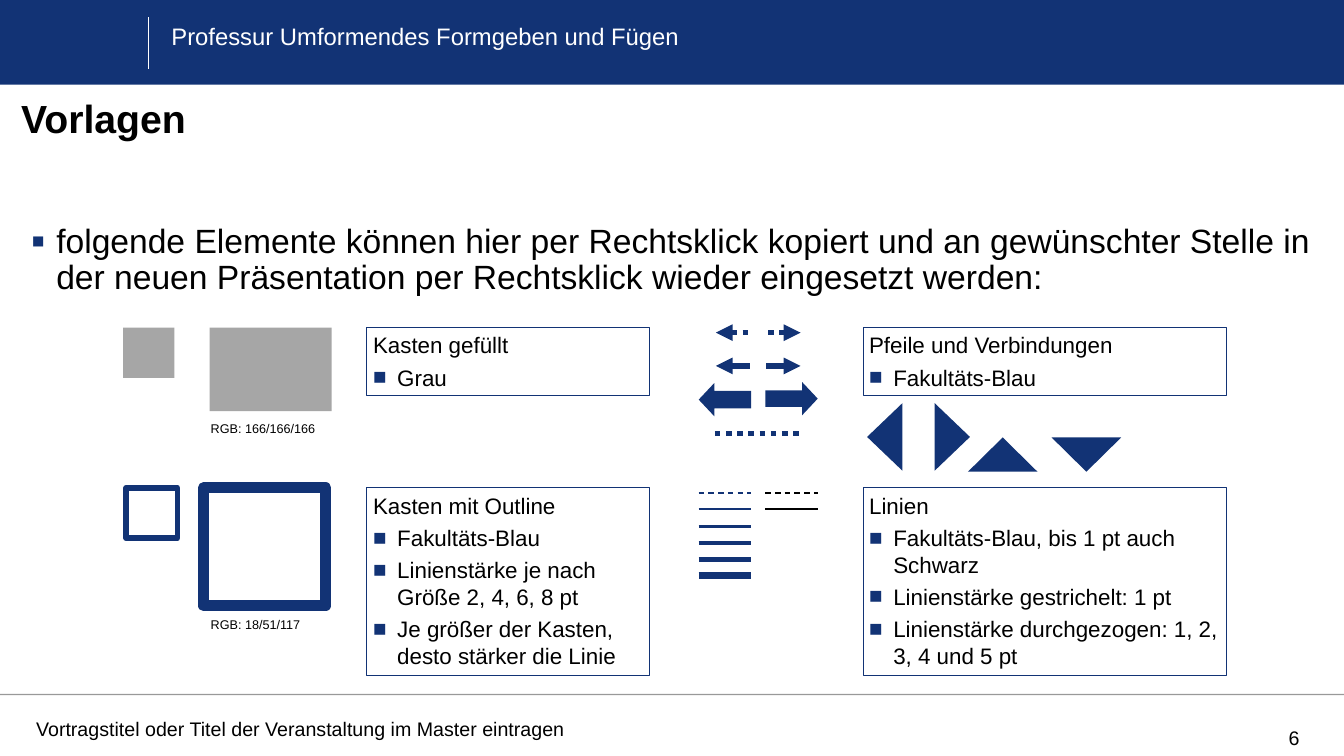
from lxml.etree import SubElement
from pptx import Presentation
from pptx.dml.color import RGBColor
from pptx.enum.dml import MSO_LINE_DASH_STYLE as Dash
from pptx.enum.shapes import MSO_CONNECTOR as Connector, MSO_SHAPE as Shape
from pptx.enum.text import MSO_ANCHOR as Anchor, MSO_AUTO_SIZE as AutoSize, PP_ALIGN as Align
from pptx.oxml.ns import qn
from pptx.util import Pt

BLUE, GREY, BLACK, WHITE = "123375", "A6A6A6", "000000", "FFFFFF"


def px(length):
    return length * 9144


def color(value):
    return RGBColor.from_string(value)


class SlideBuilder:
    """Draws styled elements on one slide, with lengths in px at 100 px per inch."""

    font = "Arial"

    def __init__(self, slide):
        self.slide = slide

    def shape(self, kind, box, fill=None, outline=None, weight=0.75, adjustments=()):
        shape = self.slide.shapes.add_shape(kind, *map(px, box))
        shape.shadow.inherit = False
        for index, value in enumerate(adjustments):
            shape.adjustments[index] = value
        if fill:
            shape.fill.solid()
            shape.fill.fore_color.rgb = color(fill)
        else:
            shape.fill.background()
        if outline:
            shape.line.color.rgb = color(outline)
            shape.line.width = Pt(weight)
        else:
            shape.line.fill.background()
        return shape

    def line(self, start, end, stroke=BLUE, weight=1, dash=None, arrow=False, opacity=None):
        line = self.slide.shapes.add_connector(Connector.STRAIGHT, *map(px, start + end))
        line.line.color.rgb = color(stroke)
        line.line.width = Pt(weight)
        if dash:
            line.line.dash_style = dash
        properties = line._element.spPr
        outline = properties.find(qn("a:ln"))
        if opacity:
            rgb = outline.find(".//" + qn("a:srgbClr"))
            SubElement(rgb, qn("a:alpha"), val=str(opacity * 1000))
        if arrow:
            SubElement(outline, qn("a:headEnd"), type="triangle")
        SubElement(properties, qn("a:effectLst"))

    def bullet(self, paragraph, char, size=100):
        properties = paragraph._p.get_or_add_pPr()
        SubElement(SubElement(properties, qn("a:buClr")), qn("a:srgbClr"), val=BLUE)
        SubElement(properties, qn("a:buSzPct"), val=str(size * 1000))
        SubElement(properties, qn("a:buFont"), typeface=self.font)
        SubElement(properties, qn("a:buChar"), char=char)

    def indent(self, paragraph, length):
        properties = paragraph._p.get_or_add_pPr()
        properties.set("marL", str(px(length)))
        properties.set("indent", str(-px(length)))

    def style(self, paragraph, size, ink=BLACK, bold=False):
        for run in paragraph.runs:
            run.font.name = self.font
            run.font.size = Pt(size)
            run.font.bold = bold
            run.font.color.rgb = color(ink)

    def margins(self, frame, horizontal, vertical):
        frame.margin_left = frame.margin_right = px(horizontal)
        frame.margin_top = frame.margin_bottom = px(vertical)

    def text(self, box, text, size, ink=BLACK, bold=False, margins=(0, 0), spacing=1.0):
        frame = self.slide.shapes.add_textbox(*map(px, box)).text_frame
        frame.word_wrap = True
        self.margins(frame, *margins)
        frame.text = text
        paragraph = frame.paragraphs[0]
        paragraph.line_spacing = spacing
        self.style(paragraph, size, ink, bold)
        return frame

    def legend(self, box, heading, *items):
        frame = self.shape(Shape.RECTANGLE, box, outline=BLUE).text_frame
        frame.word_wrap = True
        frame.auto_size = AutoSize.SHAPE_TO_FIT_TEXT
        frame.vertical_anchor = Anchor.TOP
        self.margins(frame, 6, 4)
        frame.text = "\n".join((heading, *items))
        for index, paragraph in enumerate(frame.paragraphs):
            paragraph.alignment = Align.LEFT
            paragraph.space_after = Pt(3.7)
            self.indent(paragraph, 24)
            if index:
                self.bullet(paragraph, "■")
            self.style(paragraph, 16)


def draw_frame(builder):
    builder.shape(Shape.RECTANGLE, (0, 0, 1333, 84), BLUE)
    builder.line((0, 689), (1333, 689), BLACK, opacity=40)
    builder.line((147, 17), (147, 68), WHITE, 0.5)
    builder.text((170, 16, 1142, 51), "Professur Umformendes Formgeben und Fügen", 17, WHITE, spacing=1.2)
    builder.text((26, 706, 600, 37), "Vortragstitel oder Titel der Veranstaltung im Master eintragen",
                 14, margins=(10, 5))
    number = builder.text((1248, 714, 71, 36), "6", 14)
    number.vertical_anchor = Anchor.MIDDLE
    number.paragraphs[0].alignment = Align.CENTER


def draw_content(builder):
    builder.text((21, 99, 1291, 102), "Vorlagen", 28, bold=True, spacing=0.9)
    intro = builder.text(
        (21, 218, 1291, 100),
        "folgende Elemente können hier per Rechtsklick kopiert und an gewünschter Stelle in "
        "der neuen Präsentation per Rechtsklick wieder eingesetzt werden:",
        24, margins=(10, 5), spacing=0.9).paragraphs[0]
    builder.indent(intro, 25)
    builder.bullet(intro, "▪", 120)

    builder.legend((364, 325, 280, 67), "Kasten gefüllt", "Grau")
    builder.legend((856, 325, 361, 67), "Pfeile und Verbindungen", "Fakultäts-Blau")
    builder.legend((364, 484, 280, 186), "Kasten mit Outline", "Fakultäts-Blau",
                   "Linienstärke je nach Größe 2, 4, 6, 8 pt",
                   "Je größer der Kasten, desto stärker die Linie")
    builder.legend((856, 484, 361, 186), "Linien", "Fakultäts-Blau, bis 1 pt auch Schwarz",
                   "Linienstärke gestrichelt: 1 pt",
                   "Linienstärke durchgezogen: 1, 2, 3, 4 und 5 pt")


def draw_samples(builder):
    for box in ((122, 325, 51, 50), (208, 325, 121, 83)):
        builder.shape(Shape.RECTANGLE, box, GREY)
    for box, weight in (((125, 484, 51, 50), 4), ((202, 484, 121, 117), 8)):
        builder.shape(Shape.RECTANGLE, box, WHITE, BLUE, weight)
    for top, label in ((418, "RGB: 166/166/166"), (612, "RGB: 18/51/117")):
        builder.text((209, top, 120, 15), label, 9)

    for kind, box, adjustments in (
        (Shape.LEFT_ARROW, (860, 400, 35, 67), (0.48, 1)),
        (Shape.RIGHT_ARROW, (927, 400, 35, 67), (0.5, 1)),
        (Shape.UP_ARROW, (960, 434, 69, 34), (0.38, 1)),
        (Shape.DOWN_ARROW, (1043, 434, 69, 34), (0.43, 1)),
        (Shape.LEFT_ARROW, (693, 380, 52, 33), (0.53, 0.47)),
        (Shape.RIGHT_ARROW, (759, 379, 52, 33), (0.5, 0.47)),
    ):
        builder.shape(kind, box, BLUE, adjustments=adjustments)

    for y, dash in ((330, Dash.ROUND_DOT), (363, None)):
        for tip, tail in ((710, 744), (794, 760)):
            builder.line((tip, y), (tail, y), weight=4, dash=dash, arrow=True)
    builder.line((709, 430), (795, 430), weight=4, dash=Dash.ROUND_DOT)

    for left, stroke in ((693, BLUE), (759, BLACK)):
        for y, dash in ((489, Dash.DASH), (505, None)):
            builder.line((left, y), (left + 52, y), stroke, dash=dash)
    for weight, y in zip(range(2, 6), (522, 539, 555, 571)):
        builder.line((693, y), (745, y), weight=weight)


def main():
    presentation = Presentation()
    presentation.slide_width, presentation.slide_height = px(1333), px(750)
    builder = SlideBuilder(presentation.slides.add_slide(presentation.slide_layouts[6]))
    draw_frame(builder)
    draw_content(builder)
    draw_samples(builder)
    presentation.save("out.pptx")


if __name__ == "__main__":
    main()
